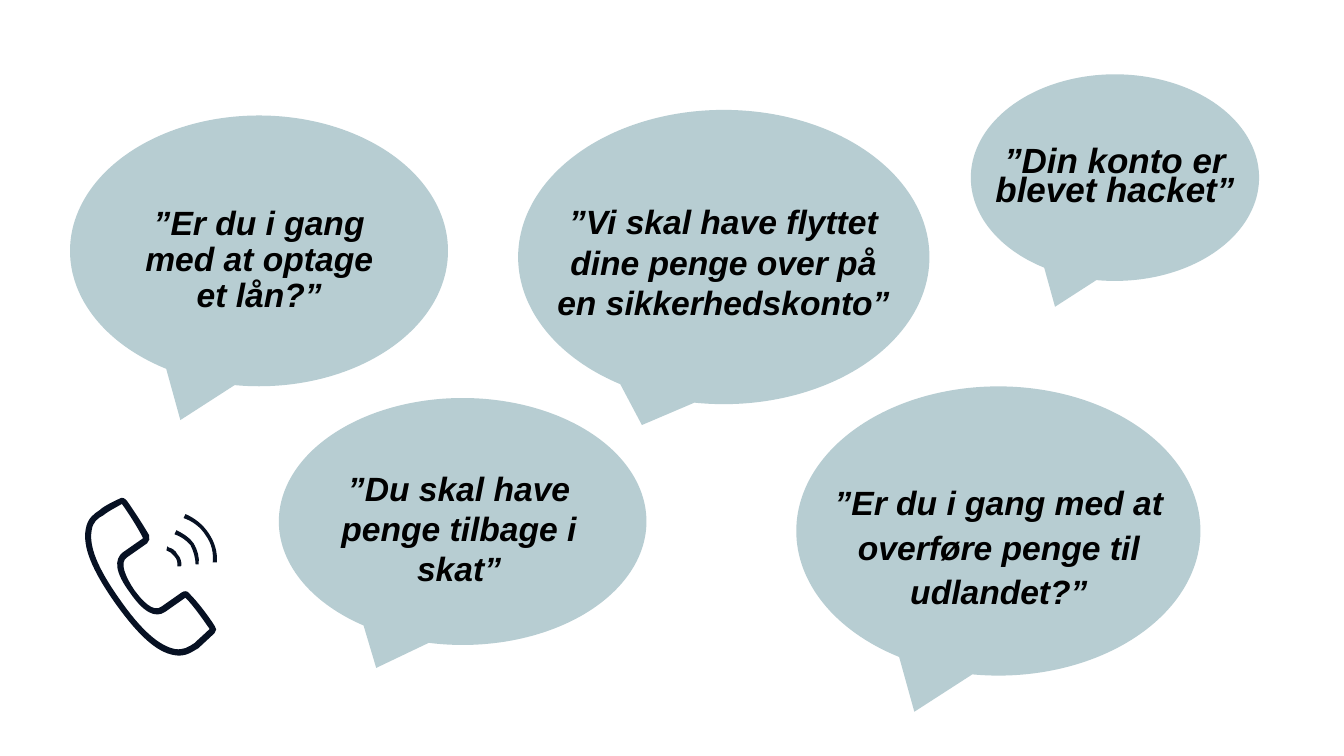
from math import cos, radians, sin

from lxml import etree
from pptx import Presentation
from pptx import util as u
from pptx.dml.color import RGBColor
from pptx.enum import shapes, text
from pptx.oxml import ns

BUBBLE = RGBColor(0xB7, 0xCD, 0xD2)
INK = RGBColor(0x07, 0x11, 0x23)
BLACK = RGBColor(0, 0, 0)

GRID = u.Pt(0.72)  # drawing unit of the phone icon
TAIL = (-0.208, 0.625)

# Bubble box, tail tip, text box, words, font size, line spacing
QUOTES = [
    ((693.5, 53.1, 205.9, 147.6), TAIL, (677.6, 101.5, 237.6, 51.1),
     "”Din konto er blevet hacket”", 25, 0.7),
    ((370.1, 78.5, 293.8, 210.2), (-0.199, 0.571), (383.6, 94.8, 266.4, 139),
     "”Vi skal have flyttet dine penge over på en sikkerhedskonto”", 24, 1),
    ((568.8, 276, 288.7, 206.6), TAIL, (572.4, 318.4, 282.2, 121.7),
     "”Er du i gang med at overføre penge til udlandet?”", 24, 1.1),
    ((50, 82.5, 270, 193.4), TAIL, (91.2, 76.5, 187.9, 151.9),
     "”Er du i gang med at optage et lån?”", 24, 0.9),
    ((199.2, 284.3, 262.6, 176.4), (-0.235, 0.593), (222.8, 267.8, 210.2, 156.2),
     "”Du skal have penge tilbage i skat”", 24, 1),
]

# Each outline is a start point, then lines (x, y) and cubic curves (six numbers)
HANDSET = [
    [(213, 621), (208, 613, 197, 598, 188, 589), (186, 586, 183, 586, 180, 588),
     (160, 602), (152, 608, 141, 596, 133, 585), (125, 573, 118, 558, 126, 553),
     (146, 539), (148, 537, 149, 534, 148, 531), (141, 519, 131, 504, 126, 497),
     (124, 494, 121, 493, 118, 495), (114, 497, 103, 502, 99, 506),
     (93, 510, 87, 514, 85, 525), (82, 543, 91, 565, 114, 598),
     (137, 630, 155, 647, 173, 650), (184, 652, 190, 647, 197, 643),
     (200, 640, 209, 632, 213, 628), (215, 626, 215, 623, 213, 621)],
    [(193, 638), (187, 642, 182, 645, 174, 644), (158, 641, 140, 625, 119, 595),
     (97, 564, 88, 542, 91, 526), (92, 518, 97, 514, 103, 511),
     (106, 508, 116, 503, 121, 500), (126, 507, 136, 522, 142, 534),
     (122, 548), (113, 555, 114, 568, 129, 588), (142, 607, 154, 614, 164, 607),
     (184, 593), (193, 602, 203, 617, 208, 624), (204, 628, 196, 635, 193, 638)],
]
WAVES = [
    [(180, 561), (179, 562), (176, 562), (176, 558, 176, 555, 173, 552),
     (171, 549, 168, 547, 165, 546), (166, 542), (167, 543),
     (171, 544, 174, 546, 176, 550), (179, 553, 180, 557, 180, 561)],
    [(175, 526), (173, 530), (179, 532, 185, 536, 189, 541),
     (192, 547, 194, 554, 194, 560), (197, 560),
     (198, 553, 196, 546, 192, 539), (188, 533, 181, 529, 175, 526)],
    [(207, 529), (201, 520, 193, 514, 184, 510), (182, 514),
     (191, 517, 199, 523, 204, 531), (210, 539, 212, 549, 211, 558),
     (215, 558), (216, 548, 213, 538, 207, 529)],
]


def turn(x, y, degrees):
    """Rotate a point clockwise about the slide's top left corner."""
    c, s = cos(radians(degrees)), sin(radians(degrees))
    return x * c - y * s, x * s + y * c


def bend(sp, outlines):
    """Merge the three line segments of each cubic step into one curve."""
    lines = iter(list(sp._element.iter(ns.qn("a:lnTo"))))
    for outline in outlines:
        for step in outline[1:]:
            parts = [next(lines) for _ in range(len(step) // 2)]
            if len(parts) == 3:
                curve = etree.Element(ns.qn("a:cubicBezTo"))
                parts[0].addprevious(curve)
                for part in parts:
                    curve.append(part[0])
                    part.getparent().remove(part)


class Deck:
    def __init__(self, font):
        self.font = font
        self.prs = Presentation()
        self.prs.slide_width, self.prs.slide_height = u.Pt(960), u.Pt(540)
        self.s = self.prs.slides.add_slide(self.prs.slide_layouts[6])

    def group(self, *members):
        self.s.shapes.add_group_shape(members)

    def paint(self, sp, color):
        sp.shadow.inherit = False
        sp.fill.solid()
        sp.fill.fore_color.rgb = color
        sp.line.fill.background()
        return sp

    def bubble(self, box, tail):
        sp = self.s.shapes.add_shape(shapes.MSO_SHAPE.OVAL_CALLOUT, *map(u.Pt, box))
        sp.adjustments[0], sp.adjustments[1] = tail
        return self.paint(sp, BUBBLE)

    def words(self, box, content, size, spacing):
        sp = self.s.shapes.add_textbox(*map(u.Pt, box))
        tf = sp.text_frame
        tf.word_wrap = True
        tf.vertical_anchor = text.MSO_ANCHOR.BOTTOM
        p = tf.paragraphs[0]
        p.text = content
        p.alignment = text.PP_ALIGN.CENTER
        p.line_spacing = float(spacing)
        p.font.name, p.font.size = self.font, u.Pt(size)
        p.font.bold = p.font.italic = True
        p.font.color.rgb = BLACK
        return sp

    def drawing(self, outlines, rotation):
        """Draw outlines, given as they appear, as a shape with this rotation."""
        builder = None
        for outline in outlines:
            start, *points = [turn(step[i] * GRID, step[i + 1] * GRID, -rotation)
                              for step in outline for i in range(0, len(step), 2)]
            if builder is None:
                builder = self.s.shapes.build_freeform(*start)
            else:
                builder.move_to(*start)
            builder.add_line_segments(points)
        sp = builder.convert_to_shape()
        bend(sp, outlines)
        x, y = turn(sp.left + sp.width / 2, sp.top + sp.height / 2, rotation)
        sp.left, sp.top = round(x - sp.width / 2), round(y - sp.height / 2)
        sp.rotation = rotation
        return self.paint(sp, INK)


def main():
    deck = Deck("Arial")
    for box, tail, text_box, content, size, spacing in QUOTES:
        deck.group(deck.bubble(box, tail),
                   deck.words(text_box, content, size, spacing))
    deck.group(deck.drawing(HANDSET, 9.8), deck.drawing(WAVES, 56))
    deck.prs.save("out.pptx")


if __name__ == "__main__":
    main()
